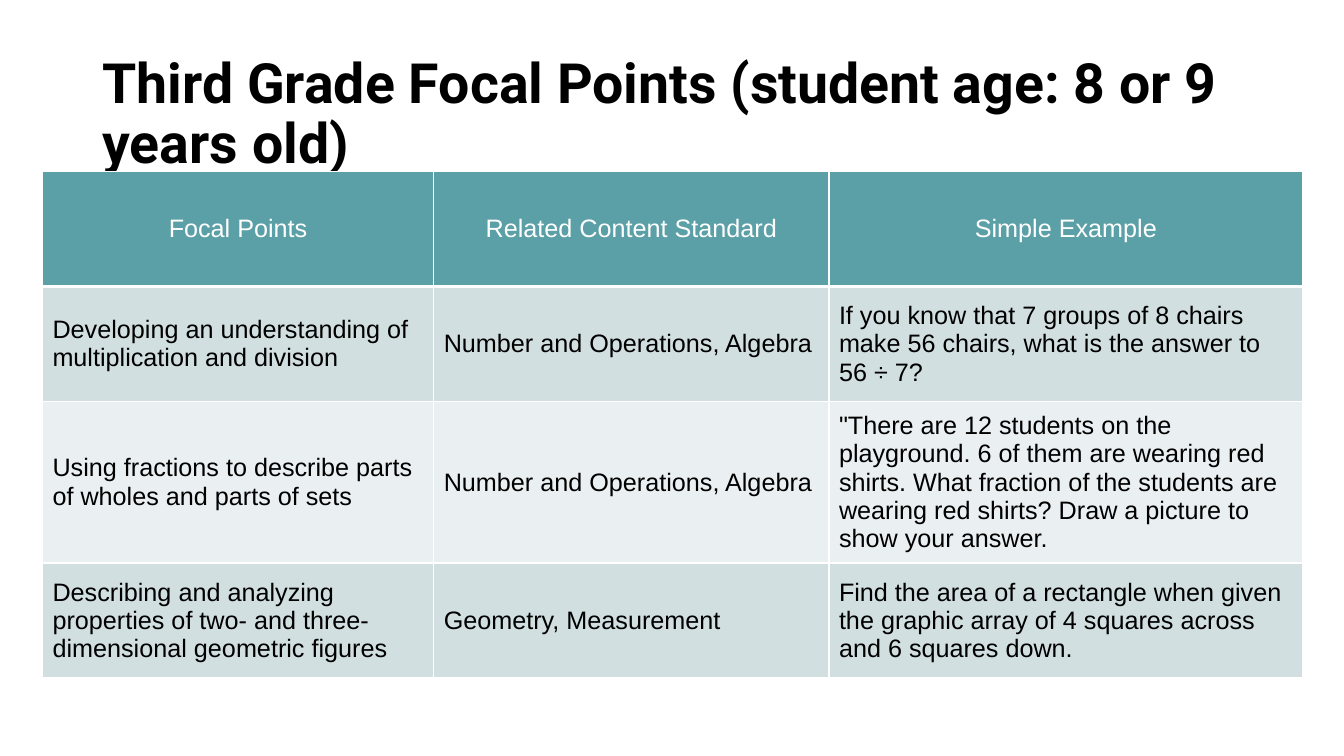
import pptx
import pptx.util
import pptx.dml.color
import pptx.enum.text
import pptx.oxml
import pptx.oxml.ns

Cm, Pt = pptx.util.Cm, pptx.util.Pt
ALIGN = pptx.enum.text.PP_ALIGN
MIDDLE = pptx.enum.text.MSO_ANCHOR.MIDDLE

COLORS = {
    "black": "000000",
    "white": "FFFFFF",
    "head": "5CA0A7",
    "odd": "D2DFE1",
    "even": "EAF0F1",
}

TITLE = "Third Grade Focal Points (student age: 8 or 9 years old)"
ROWS = [
    ["Focal Points", "Related Content Standard", "Simple Example"],
    ["Developing an understanding of multiplication and division",
     "Number and Operations, Algebra",
     "If you know that 7 groups of 8 chairs make 56 chairs, "
     "what is the answer to 56 ÷ 7?"],
    ["Using fractions to describe parts of wholes and parts of sets",
     "Number and Operations, Algebra",
     '"There are 12 students on the playground. 6 of them are wearing red '
     "shirts. What fraction of the students are wearing red shirts? "
     "Draw a picture to show your answer."],
    ["Describing and analyzing properties of two- and three-dimensional "
     "geometric figures",
     "Geometry, Measurement",
     "Find the area of a rectangle when given the graphic array of "
     "4 squares across and 6 squares down."],
]
WIDTHS = [9.86, 9.96, 11.94]
HEIGHT = 2.9


def color(name):
    return pptx.dml.color.RGBColor.from_string(COLORS[name])


def style(para, face, size, tint, bold=False):
    for run in para.runs:
        run.font.name = face
        run.font.size = Pt(size)
        run.font.bold = bold
        run.font.color.rgb = color(tint)


def add_title(slide):
    box = slide.shapes.add_textbox(Cm(2.33), Cm(1.68), Cm(29.21), Cm(2.46))
    frame = box.text_frame
    frame.word_wrap = True
    frame.vertical_anchor = MIDDLE
    frame.text = TITLE
    para = frame.paragraphs[0]
    para.line_spacing = 0.9
    style(para, "Roboto", 39.6, "black", True)


def add_edge(cell, side, width):
    space = pptx.oxml.ns.nsdecls("a")
    line = pptx.oxml.parse_xml(
        f'<a:ln{side} {space} w="{Pt(width)}"><a:solidFill>'
        f'<a:srgbClr val="{COLORS["white"]}"/></a:solidFill></a:ln{side}>')
    cell._tc.get_or_add_tcPr().append(line)


def fill_cell(cell, text, row):
    head = row == 0
    # Borders come before the fill in the cell properties
    for side in "LRTB":
        thick = (head and side == "B") or (row == 1 and side == "T")
        add_edge(cell, side, 3 if thick else 1)
    cell.fill.solid()
    cell.fill.fore_color.rgb = color(
        "head" if head else "odd" if row % 2 else "even")
    cell.vertical_anchor = MIDDLE
    cell.text_frame.text = text
    para = cell.text_frame.paragraphs[0]
    para.alignment = ALIGN.CENTER if head else ALIGN.LEFT
    style(para, "Arial", 18, "white" if head else "black")


def add_grid(slide):
    frame = slide.shapes.add_table(
        len(ROWS), len(WIDTHS), Cm(1.07), Cm(4.32),
        Cm(sum(WIDTHS)), Cm(HEIGHT * len(ROWS)))
    table = frame.table
    table.horz_banding = False
    for col, width in zip(table.columns, WIDTHS):
        col.width = Cm(width)
    for r, texts in enumerate(ROWS):
        table.rows[r].height = Cm(HEIGHT)
        for c, text in enumerate(texts):
            fill_cell(table.cell(r, c), text, r)


def main():
    deck = pptx.Presentation()
    deck.slide_width, deck.slide_height = Cm(33.87), Cm(19.05)
    slide = deck.slides.add_slide(deck.slide_layouts[6])
    # The table lies over the lower edge of the title
    add_title(slide)
    add_grid(slide)
    deck.save("out.pptx")


if __name__ == "__main__":
    main()
